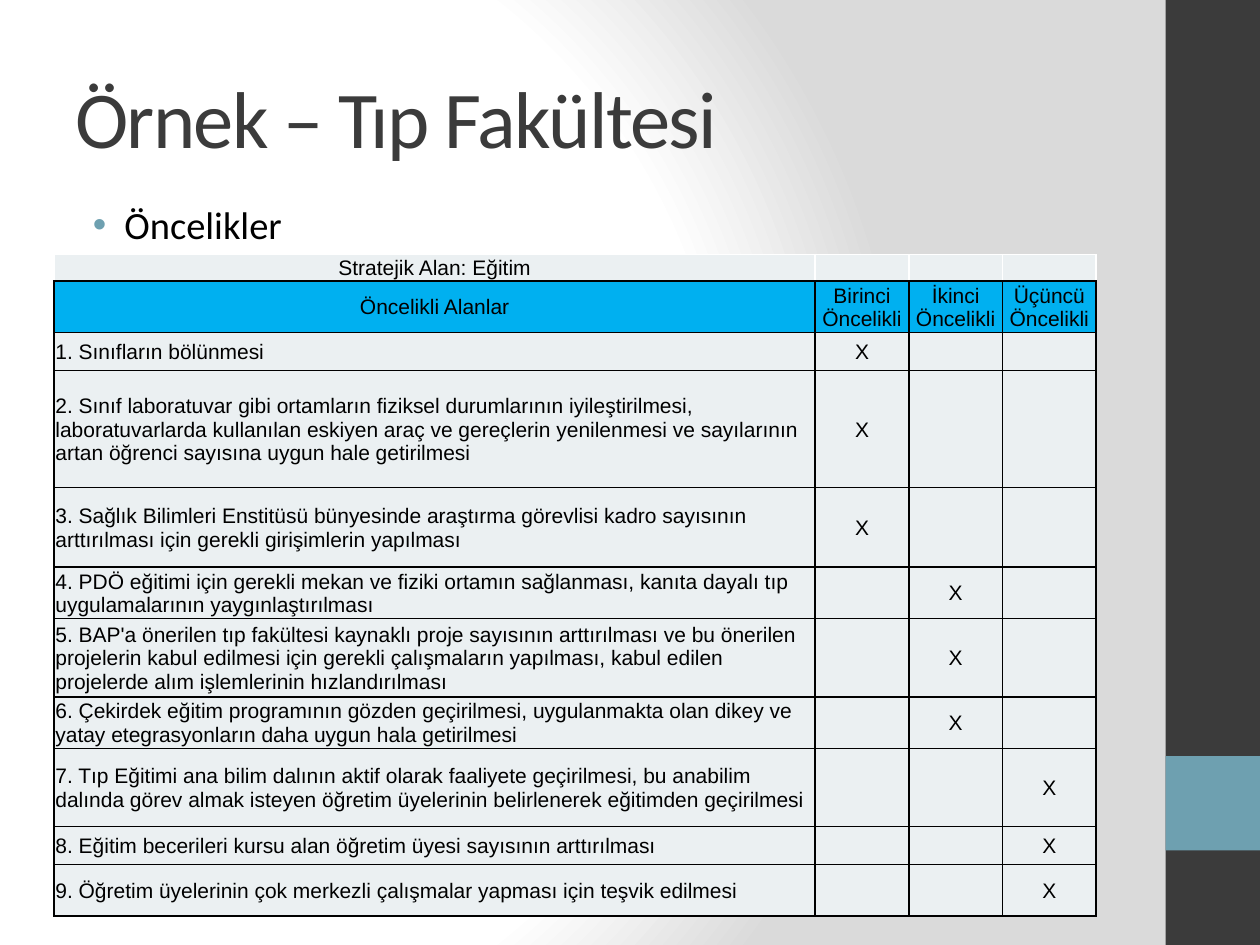
from lxml import etree
from pptx import Presentation
from pptx.dml.color import RGBColor
from pptx.enum.shapes import MSO_SHAPE
from pptx.enum.text import MSO_ANCHOR, PP_ALIGN
from pptx.oxml import parse_xml
from pptx.oxml.ns import nsdecls, qn
from pptx.util import Inches, Pt

DARK = RGBColor(0x3B, 0x3B, 0x3B)
TEAL = RGBColor(0x6E, 0xA0, 0xB0)
BLACK = RGBColor(0, 0, 0)
WHITE = RGBColor(0xFF, 0xFF, 0xFF)
GREY = RGBColor(0xDA, 0xDA, 0xDA)
BLUE = RGBColor(0x00, 0xB0, 0xF0)
PALE = RGBColor(0xEB, 0xF0, 0xF2)

LEVELS = ["Birinci Öncelikli", "İkinci Öncelikli", "Üçüncü Öncelikli"]

# Row height, priority level, text
AREAS = [
    (0.3, 1, "1. Sınıfların bölünmesi"),
    (0.93, 1, "2. Sınıf laboratuvar gibi ortamların fiziksel durumlarının "
     "iyileştirilmesi, laboratuvarlarda kullanılan eskiyen araç ve gereçlerin "
     "yenilenmesi ve sayılarının artan öğrenci sayısına uygun hale getirilmesi"),
    (0.63, 1, "3. Sağlık Bilimleri Enstitüsü bünyesinde araştırma görevlisi "
     "kadro sayısının arttırılması için gerekli girişimlerin yapılması"),
    (0.41, 2, "4. PDÖ eğitimi için gerekli mekan ve fiziki ortamın sağlanması, "
     "kanıta dayalı tıp uygulamalarının yaygınlaştırılması"),
    (0.62, 2, "5. BAP'a önerilen tıp fakültesi kaynaklı proje sayısının "
     "arttırılması ve bu önerilen projelerin kabul edilmesi için gerekli "
     "çalışmaların yapılması, kabul edilen projelerde alım işlemlerinin "
     "hızlandırılması"),
    (0.41, 2, "6. Çekirdek eğitim programının gözden geçirilmesi, uygulanmakta "
     "olan dikey ve yatay etegrasyonların daha uygun hala getirilmesi"),
    (0.62, 3, "7. Tıp Eğitimi ana bilim dalının aktif olarak faaliyete "
     "geçirilmesi, bu anabilim dalında görev almak isteyen öğretim üyelerinin "
     "belirlenerek eğitimden geçirilmesi"),
    (0.3, 3, "8. Eğitim becerileri kursu alan öğretim üyesi sayısının arttırılması"),
    (0.41, 3, "9. Öğretim üyelerinin çok merkezli çalışmalar yapması için "
     "teşvik edilmesi"),
]


def paint_back(slide):
    """Give the slide a radial gradient from white to grey."""
    fill = slide.background.fill
    fill.solid()
    solid = slide.element.find(".//" + qn("a:solidFill"))
    stops = "".join(
        f'<a:gs pos="{pos * 1000}"><a:srgbClr val="{color}"/></a:gs>'
        for pos, color in [(0, WHITE), (75, WHITE), (100, GREY)])
    solid.getparent().replace(solid, parse_xml(
        f'<a:gradFill {nsdecls("a")} rotWithShape="1"><a:gsLst>{stops}</a:gsLst>'
        '<a:path path="circle"><a:fillToRect l="20000" t="50000" r="100000" '
        'b="50000"/></a:path></a:gradFill>'))


def add_bar(slide, top, height, color):
    bar = slide.shapes.add_shape(MSO_SHAPE.RECTANGLE, Inches(9.25), Inches(top),
                                 Inches(0.75), Inches(height))
    bar.shadow.inherit = False
    bar.fill.solid()
    bar.fill.fore_color.rgb = color
    bar.line.fill.background()


def style_font(font, name, size, color):
    font.name = name
    font.size = Pt(size)
    font.color.rgb = color


def add_text(slide, text, box, size, color, anchor):
    """Add a one-paragraph text box and return its paragraph."""
    frame = slide.shapes.add_textbox(*map(Inches, box)).text_frame
    frame.word_wrap = True
    frame.vertical_anchor = anchor
    frame.text = text
    para = frame.paragraphs[0]
    style_font(para.runs[0].font, "Calibri", size, color)
    return para


def add_bullet(para, color):
    props = para._p.get_or_add_pPr()
    props.set("marL", str(Inches(0.38)))
    props.set("indent", str(Inches(-0.25)))
    tint = etree.SubElement(props, qn("a:buClr"))
    etree.SubElement(tint, qn("a:srgbClr"), val=str(color))
    etree.SubElement(props, qn("a:buFont"), typeface="Arial")
    etree.SubElement(props, qn("a:buChar"), char="•")


def set_edges(cell, side, base):
    """Draw the left, right and top edges in one colour, the bottom in another."""
    props = cell._tc.get_or_add_tcPr()
    edges = [("lnL", side), ("lnR", side), ("lnT", side), ("lnB", base)]
    for spot, (tag, color) in enumerate(edges):
        props.insert(spot, parse_xml(
            f'<a:{tag} {nsdecls("a")} w="{Pt(1)}"><a:solidFill>'
            f'<a:srgbClr val="{color}"/></a:solidFill></a:{tag}>'))


def fill_cell(cell, text, align, fill, edge):
    cell.fill.solid()
    cell.fill.fore_color.rgb = fill
    cell.margin_left = cell.margin_right = cell.margin_top = Inches(0.01)
    cell.margin_bottom = 0
    cell.vertical_anchor = MSO_ANCHOR.MIDDLE
    para = cell.text_frame.paragraphs[0]
    para.alignment = align
    if text:
        para.text = text
        style_font(para.runs[0].font, "Arial", 12, BLACK)
    else:
        etree.SubElement(para._p, qn("a:endParaRPr"), sz="1200")
    set_edges(cell, edge, BLACK)


def add_grid(slide):
    marks = [["X" if level == col else "" for col in (1, 2, 3)]
             for _, level, _ in AREAS]
    rows = [["Stratejik Alan: Eğitim", "", "", ""], ["Öncelikli Alanlar", *LEVELS]]
    rows += [[area[2], *mark] for area, mark in zip(AREAS, marks)]
    heights = [0.21, 0.41] + [area[0] for area in AREAS]
    wide, total = 6.04, 8.27
    widths = [wide] + [(total - wide) / 3] * 3

    table = slide.shapes.add_table(len(rows), len(widths), Inches(0.43), Inches(2.02),
                                   Inches(total), Inches(sum(heights))).table
    for col, width in zip(table.columns, widths):
        col.width = Inches(width)
    for r, (row, height) in enumerate(zip(rows, heights)):
        table.rows[r].height = Inches(height)
        for c, text in enumerate(row):
            align = PP_ALIGN.LEFT if r > 1 and c == 0 else PP_ALIGN.CENTER
            fill_cell(table.cell(r, c), text, align,
                      BLUE if r == 1 else PALE, WHITE if r == 0 else BLACK)


def main():
    deck = Presentation()
    deck.slide_width, deck.slide_height = Inches(10), Inches(7.5)
    slide = deck.slides.add_slide(deck.slide_layouts[6])
    paint_back(slide)
    add_bar(slide, 0, 7.5, DARK)
    add_bar(slide, 6, 0.75, TEAL)
    title = add_text(slide, "Örnek – Tıp Fakültesi", (0.5, 0.3, 8.33, 1.25),
                     46, DARK, MSO_ANCHOR.MIDDLE)
    title.runs[0]._r.get_or_add_rPr().set("spc", "-100")
    body = add_text(slide, "Öncelikler", (0.51, 1.55, 8.33, 5.25),
                    22, BLACK, MSO_ANCHOR.TOP)
    add_bullet(body, TEAL)
    add_grid(slide)
    deck.save("out.pptx")


if __name__ == "__main__":
    main()
